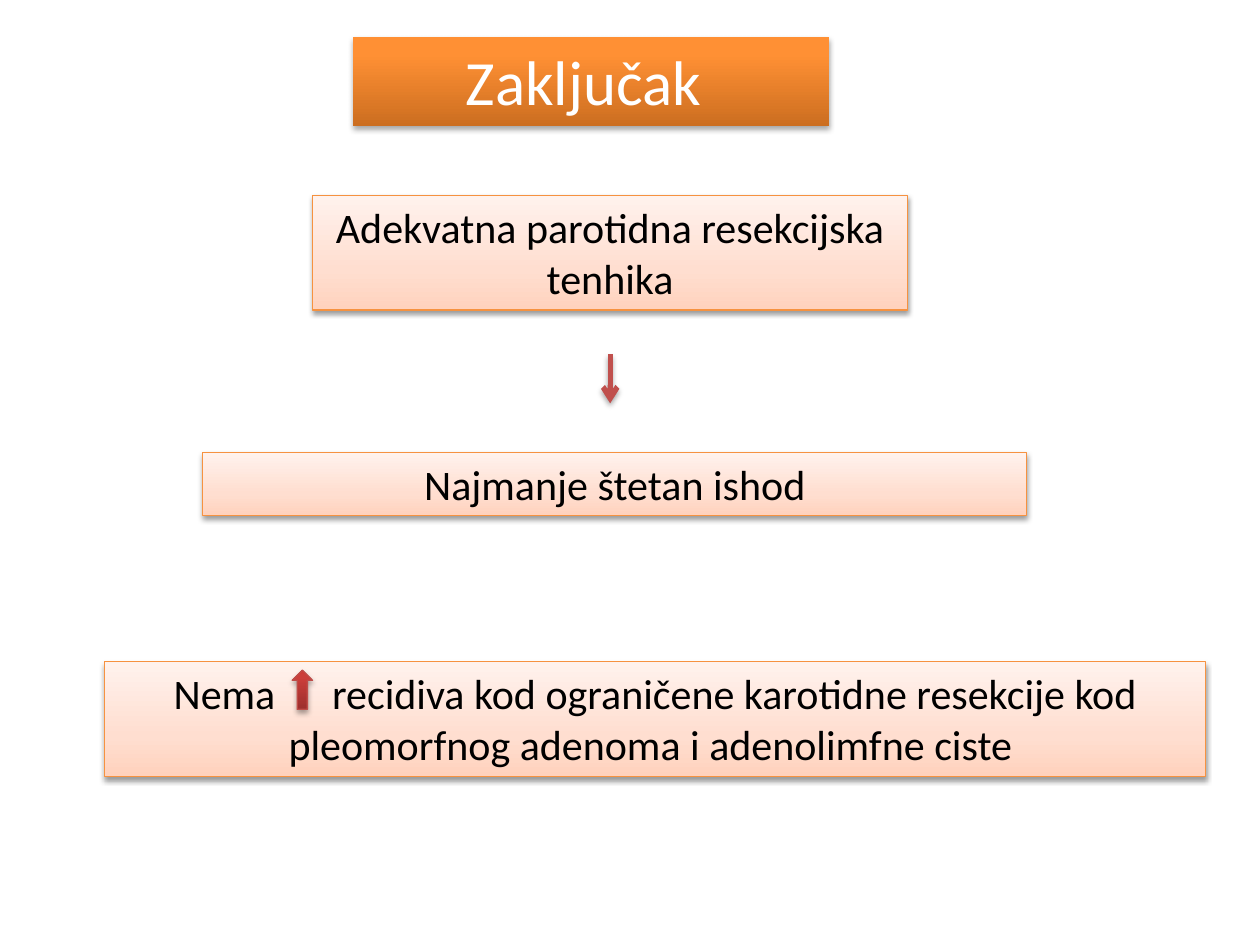
from lxml import etree
from pptx import Presentation
from pptx.dml.color import RGBColor
from pptx.enum.shapes import MSO_CONNECTOR, MSO_SHAPE
from pptx.enum.text import MSO_ANCHOR, MSO_AUTO_SIZE, PP_ALIGN
from pptx.oxml.ns import qn
from pptx.util import Cm, Pt

RECT, UP_ARROW = MSO_SHAPE.RECTANGLE, MSO_SHAPE.UP_ARROW
STRAIGHT = MSO_CONNECTOR.STRAIGHT
CENTER, TOP = PP_ALIGN.CENTER, MSO_ANCHOR.TOP
GROW = MSO_AUTO_SIZE.SHAPE_TO_FIT_TEXT

COLORS = {
    "white": "FFFFFF", "black": "000000",
    "statement_line": "F69240", "step_line": "C0504D", "increase_line": "BF4C48",
}
GRADIENTS = {
    "title": [(0, "CC6E20"), (80, "FF9034"), (100, "FF9136")],
    "statement": [(0, "FFD2BD"), (35, "FFDED0"), (100, "FFF2ED")],
    "increase": [(0, "9C2F2D"), (80, "CB3E3A"), (100, "CE3B37")],
}
STRONG_SHADOW = {"alpha": 35, "distance": 1.8}
STATEMENT_SHADOW = {"alpha": 38, "distance": 1.6}


def color(name):
    """Return the named colour."""
    return RGBColor.from_string(COLORS[name])


def add_color(parent, value):
    """Append a hex colour element and return it."""
    return etree.SubElement(parent, qn("a:srgbClr"), val=value)


def cast_shadow(effects, alpha, distance):
    """Put a soft downward shadow in an effect list."""
    shadow = etree.SubElement(
        effects, qn("a:outerShdw"), blurRad=str(Pt(3.1)), dist=str(Pt(distance)),
        dir="5400000", rotWithShape="0")
    etree.SubElement(add_color(shadow, COLORS["black"]), qn("a:alpha"),
                     val=str(alpha * 1000))


def add_panel(slide, box, preset, gradient, shadow, line=None):
    """Add a shape with an upward gradient, a shadow and an optional outline."""
    panel = slide.shapes.add_shape(preset, *map(Cm, box))
    panel.fill.gradient()
    panel.fill.gradient_angle = 90
    stops = panel._element.spPr.find(".//" + qn("a:gsLst"))
    for old_stop in list(stops):
        stops.remove(old_stop)
    for position, value in GRADIENTS[gradient]:
        add_color(etree.SubElement(stops, qn("a:gs"), pos=str(position * 1000)), value)
    if line:
        panel.line.color.rgb = color(line)
        panel.line.width = Pt(0.75)
    else:
        panel.line.fill.background()
    panel.shadow.inherit = False
    cast_shadow(panel._element.spPr.find(qn("a:effectLst")), **shadow)
    return panel


def write(panel, pieces, size, ink):
    """Write centred text from (words, extra letter spacing in points) pieces."""
    frame = panel.text_frame
    layout = {"word_wrap": True, "auto_size": GROW, "vertical_anchor": TOP}
    for name, value in layout.items():
        setattr(frame, name, value)
    paragraph = frame.paragraphs[0]
    paragraph.alignment = CENTER
    for words, spacing in pieces:
        run = paragraph.add_run()
        run.text = words
        for name, value in {"name": "Calibri", "size": Pt(size)}.items():
            setattr(run.font, name, value)
        run.font.color.rgb = color(ink)
        if spacing:
            run._r.get_or_add_rPr().set("spc", str(spacing * 100))


def add_title(slide, box, text):
    """Add the orange title bar."""
    write(add_panel(slide, box, RECT, "title", STRONG_SHADOW), [(text, 0)], 36, "white")


def add_statement(slide, box, pieces):
    """Add a pale outlined statement box."""
    panel = add_panel(slide, box, RECT, "statement", STATEMENT_SHADOW, "statement_line")
    write(panel, pieces, 24, "black")


def add_step_arrow(slide, x, top, bottom):
    """Add the downward arrow between two statements."""
    arrow = slide.shapes.add_connector(STRAIGHT, Cm(x), Cm(top), Cm(x), Cm(bottom))
    arrow.line.color.rgb = color("step_line")
    arrow.line.width = Pt(3)
    etree.SubElement(arrow.line._get_or_add_ln(), qn("a:tailEnd"), type="arrow")
    effects = etree.SubElement(arrow._element.spPr, qn("a:effectLst"))
    cast_shadow(effects, **STRONG_SHADOW)


def add_recurrence(slide, box):
    """Add the recurrence statement with an increase arrow in its text gap."""
    add_statement(slide, box, [
        ("Nema", 0), (" ", 27),
        ("recidiva kod ograničene karotidne resekcije kod "
         "pleomorfnog adenoma i adenolimfne ciste ", 0)])
    left, top = box[:2]
    add_panel(slide, (left + 3.78, top + 0.17, 0.41, 0.79), UP_ARROW,
              "increase", STRONG_SHADOW, "increase_line")


def main():
    """Build the conclusion slide."""
    deck = Presentation()
    deck.slide_width, deck.slide_height = Cm(25.4), Cm(19.05)
    slide = deck.slides.add_slide(deck.slide_layouts[6])
    add_title(slide, (7.11, 0.74, 9.6, 1.8), "Zaključak ")
    add_statement(slide, (6.3, 3.94, 12, 2.31),
                  [("Adekvatna parotidna resekcijska tenhika", 0)])
    add_step_arrow(slide, 12.3, 7.14, 8.13)
    add_statement(slide, (4.09, 9.12, 16.61, 1.28), [("Najmanje štetan ishod", 0)])
    add_recurrence(slide, (2.11, 13.34, 22.2, 2.31))
    deck.save("out.pptx")


if __name__ == "__main__":
    main()
